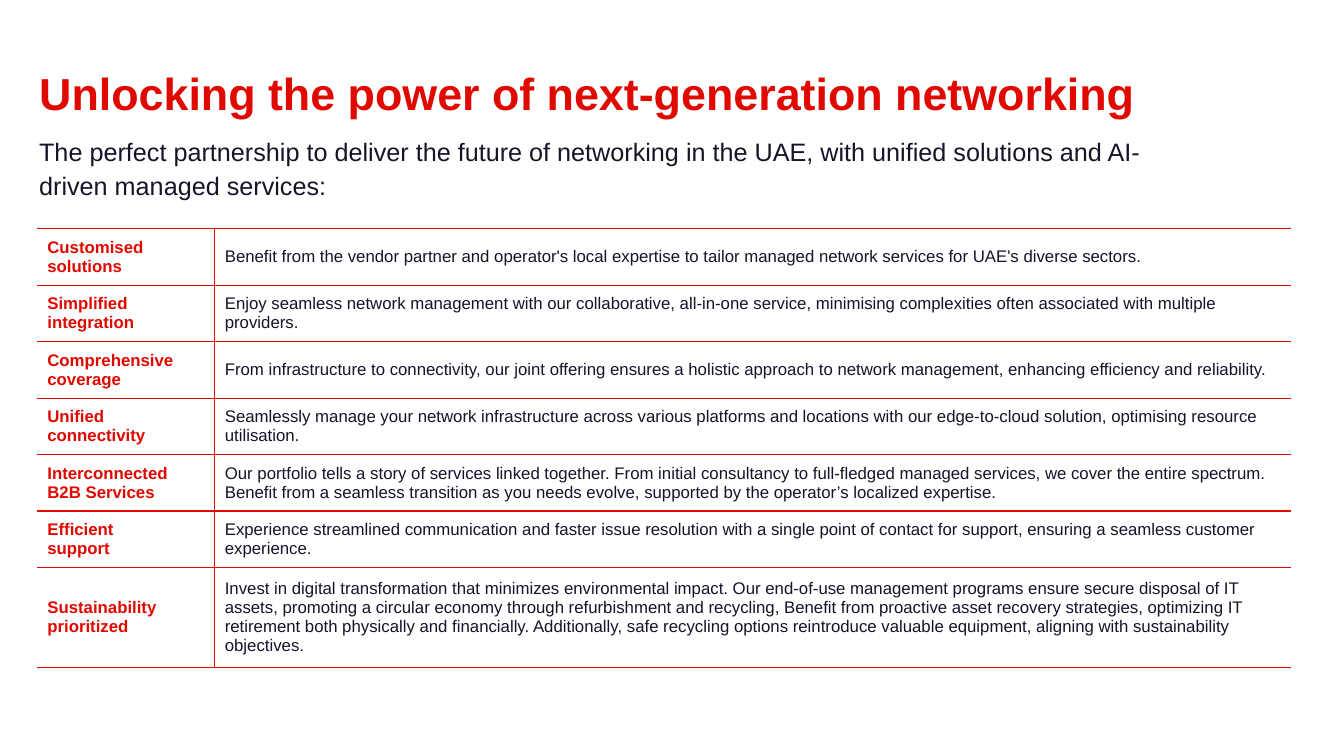
"""Build a slide with a heading, an introduction and a table of networking benefits."""
from dataclasses import dataclass

from lxml.etree import SubElement
from pptx import Presentation
from pptx.dml.color import RGBColor
from pptx.enum.text import MSO_ANCHOR as Anchor
from pptx.oxml.ns import qn
from pptx.util import Inches, Pt


@dataclass(frozen=True)
class Theme:
    font: str = "Arial"
    red: str = "DF0900"
    ink: str = "191229"
    title_size: int = 32
    intro_size: int = 18
    table_size: int = 12
    rule_width: int = 1


THEME = Theme()
SLIDE_SIZE = (13.33, 7.5)
TITLE = "Unlocking the power of next-generation networking"
INTRO = (
    "The perfect partnership to deliver the future of networking in the UAE, "
    "with unified solutions and AI-driven managed services:"
)
BENEFITS = [
    (("Customised", "solutions"),
     "Benefit from the vendor partner and operator's local expertise to tailor managed "
     "network services for UAE's diverse sectors."),
    (("Simplified", "integration"),
     "Enjoy seamless network management with our collaborative, all-in-one service, "
     "minimising complexities often associated with multiple providers."),
    (("Comprehensive coverage",),
     "From infrastructure to connectivity, our joint offering ensures a holistic approach "
     "to network management, enhancing efficiency and reliability."),
    (("Unified", "connectivity"),
     "Seamlessly manage your network infrastructure across various platforms and locations "
     "with our edge-to-cloud solution, optimising resource utilisation."),
    (("Interconnected B2B Services",),
     "Our portfolio tells a story of services linked together. From initial consultancy to "
     "full-fledged managed services, we cover the entire spectrum. Benefit from a seamless "
     "transition as you needs evolve, supported by the operator’s localized expertise."),
    (("Efficient", "support"),
     "Experience streamlined communication and faster issue resolution with a single point "
     "of contact for support, ensuring a seamless customer experience."),
    (("Sustainability", "prioritized"),
     "Invest in digital transformation that minimizes environmental impact. Our end-of-use "
     "management programs ensure secure disposal of IT assets, promoting a circular economy "
     "through refurbishment and recycling, Benefit from proactive asset recovery strategies, "
     "optimizing IT retirement both physically and financially. Additionally, safe recycling "
     "options reintroduce valuable equipment, aligning with sustainability objectives."),
]
TITLE_BOX = (0.29, 0.52, 12.48, 0.69)
INTRO_BOX = (0.29, 1.26, 11.14, 0.58)
TABLE_ORIGIN = (0.37, 2.27)
COLUMN_WIDTHS = (1.76, 10.67)
ROW_HEIGHT, LAST_ROW_HEIGHT = 0.56, 0.99


def write(frame, lines, size, color, bold=False, spacing=None, after=0):
    paragraph = frame.paragraphs[0]
    paragraph.space_after = Pt(after)
    if spacing:
        paragraph.line_spacing = spacing
    for index, line in enumerate(lines):
        if index:
            paragraph.add_line_break()
        run = paragraph.add_run()
        run.text = line
        run.font.name = THEME.font
        run.font.size = Pt(size)
        run.font.bold = bold
        run.font.color.rgb = RGBColor.from_string(color)


def add_text(slide, box, anchor, *content, **style):
    frame = slide.shapes.add_textbox(*map(Inches, box)).text_frame
    frame.word_wrap = True
    frame.vertical_anchor = anchor
    write(frame, *content, **style)


def rule_cell(cell, ruled_sides):
    properties = cell._tc.get_or_add_tcPr()
    for side in "LRTB":
        line = SubElement(properties, qn(f"a:ln{side}"), w=str(Pt(THEME.rule_width)))
        if side in ruled_sides:
            fill = SubElement(line, qn("a:solidFill"))
            SubElement(fill, qn("a:srgbClr"), val=THEME.red)
        else:
            SubElement(line, qn("a:noFill"))
    cell.fill.background()


def add_benefits(slide):
    heights = [ROW_HEIGHT] * (len(BENEFITS) - 1) + [LAST_ROW_HEIGHT]
    box = (*TABLE_ORIGIN, sum(COLUMN_WIDTHS), sum(heights))
    table = slide.shapes.add_table(
        len(BENEFITS), len(COLUMN_WIDTHS), *map(Inches, box)).table
    table.first_row = table.horz_banding = False
    for column, width in zip(table.columns, COLUMN_WIDTHS):
        column.width = Inches(width)
    for row, height, (heading, detail) in zip(table.rows, heights, BENEFITS):
        row.height = Inches(height)
        label, description = row.cells
        write(label.text_frame, heading, THEME.table_size, THEME.red, bold=True, after=6)
        write(description.text_frame, [detail], THEME.table_size, THEME.ink, after=6)
        for cell, sides in ((label, "RTB"), (description, "LTB")):
            cell.vertical_anchor = Anchor.MIDDLE
            rule_cell(cell, sides)


def main():
    presentation = Presentation()
    presentation.slide_width, presentation.slide_height = map(Inches, SLIDE_SIZE)
    slide = presentation.slides.add_slide(presentation.slide_layouts[6])
    add_text(slide, TITLE_BOX, Anchor.MIDDLE, [TITLE], THEME.title_size, THEME.red,
             bold=True, spacing=1.2, after=2.7)
    add_text(slide, INTRO_BOX, Anchor.TOP, [INTRO], THEME.intro_size, THEME.ink,
             spacing=1.14, after=1.3)
    add_benefits(slide)
    presentation.save("out.pptx")


if __name__ == "__main__":
    main()
